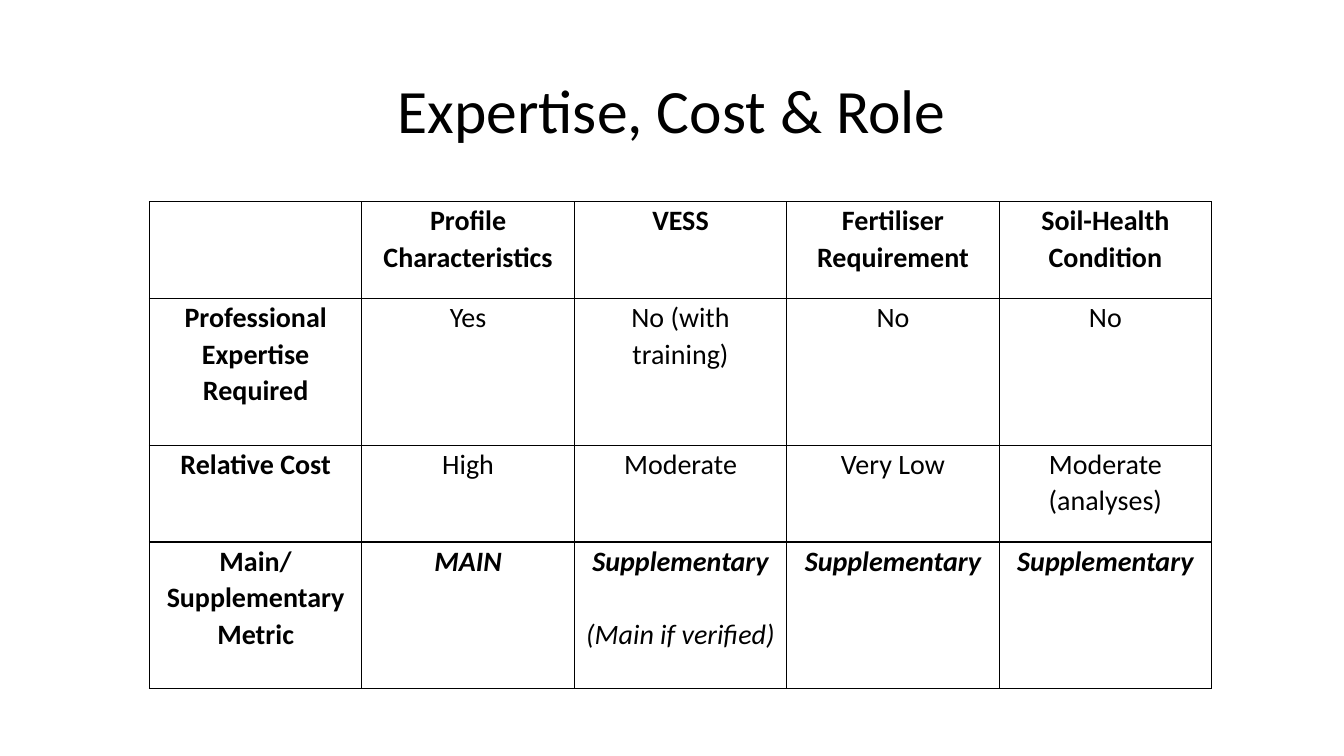
import pptx
import pptx.dml.color
import pptx.enum.text
import pptx.oxml
import pptx.oxml.ns
import pptx.util
from pptx.util import Pt

COLOURS = {"ink": "000000", "page": "FFFFFF"}
FONT = "Calibri"
PLAIN, BOLD, ITALIC, BOLD_ITALIC = (False, False), (True, False), (False, True), (True, True)
COLUMN_WIDTH = 151.75
ROW_HEIGHTS = (69.25, 104.75, 69.25, 104.75)
ROWS = [
    ([], ["Profile Characteristics"], ["VESS"], ["Fertiliser Requirement"],
     ["Soil-Health Condition"]),
    (["Professional Expertise Required"], ["Yes"], ["No (with training)"], ["No"], ["No"]),
    (["Relative Cost"], ["High"], ["Moderate"], ["Very Low"], ["Moderate (analyses)"]),
    (["Main/", "Supplementary Metric"], ["MAIN"], ["Supplementary", "(Main if verified)"],
     ["Supplementary"], ["Supplementary"]),
]


def colour(name):
    """Return the named colour."""
    return pptx.dml.color.RGBColor.from_string(COLOURS[name])


def add_span(para, text, size, style):
    """Add one centred, formatted run to a paragraph."""
    para.alignment = pptx.enum.text.PP_ALIGN.CENTER
    span = para.add_run()
    span.text = text
    span.font.name, span.font.size = FONT, Pt(size)
    span.font.bold, span.font.italic = style
    span.font.color.rgb = colour("ink")


def style_for(row, column, line):
    """Choose bold and italic from the place in the table."""
    if row == 0 or column == 0:
        return BOLD
    if row == len(ROWS) - 1:
        return ITALIC if line else BOLD_ITALIC
    return PLAIN


def add_borders(cell):
    """Draw a thin line on all four sides of a cell."""
    properties = cell._tc.get_or_add_tcPr()
    for side in ("lnL", "lnR", "lnT", "lnB"):
        properties.append(pptx.oxml.parse_xml(
            f'<a:{side} {pptx.oxml.ns.nsdecls("a")} w="{Pt(1)}"><a:solidFill>'
            f'<a:srgbClr val="{COLOURS["ink"]}"/></a:solidFill></a:{side}>'))


def fill_cell(cell, lines, row, column):
    """Format a cell and write its paragraphs."""
    add_borders(cell)
    cell.fill.background()
    cell.margin_left = cell.margin_right = Pt(5)
    cell.margin_top = cell.margin_bottom = Pt(0)
    for line, text in enumerate(lines):
        para = cell.text_frame.add_paragraph() if line else cell.text_frame.paragraphs[0]
        para.line_spacing = 1.07
        style = style_for(row, column, line)
        if style == ITALIC:
            para.space_before = Pt(26)
        add_span(para, text, 20, style)


def add_title(page, left, top, width, height):
    """Place the slide title in its box."""
    box = page.shapes.title
    box.left, box.top, box.width, box.height = Pt(left), Pt(top), Pt(width), Pt(height)
    box.text_frame.vertical_anchor = pptx.enum.text.MSO_ANCHOR.MIDDLE
    para = box.text_frame.paragraphs[0]
    para.line_spacing = 0.9
    add_span(para, "Expertise, Cost & Role", 44, PLAIN)


def add_comparison(page, left, top):
    """Place the comparison table from its top left corner."""
    columns = len(ROWS[0])
    table = page.shapes.add_table(
        len(ROWS), columns, Pt(left), Pt(top),
        Pt(COLUMN_WIDTH * columns), Pt(sum(ROW_HEIGHTS))).table
    table.first_row = table.horz_banding = False
    for column in table.columns:
        column.width = Pt(COLUMN_WIDTH)
    for row, (entries, height) in enumerate(zip(ROWS, ROW_HEIGHTS)):
        table.rows[row].height = Pt(height)
        for column, lines in enumerate(entries):
            fill_cell(table.cell(row, column), lines, row, column)


def main():
    """Build and save the slide."""
    deck = pptx.Presentation()
    deck.slide_width, deck.slide_height = Pt(960), Pt(540)
    page = deck.slides.add_slide(deck.slide_layouts[5])
    page.background.fill.solid()
    page.background.fill.fore_color.rgb = colour("page")
    add_title(page, 66, 28.75, 828, 104.4)
    add_comparison(page, 106.75, 144)
    deck.save("out.pptx")


if __name__ == "__main__":
    main()
